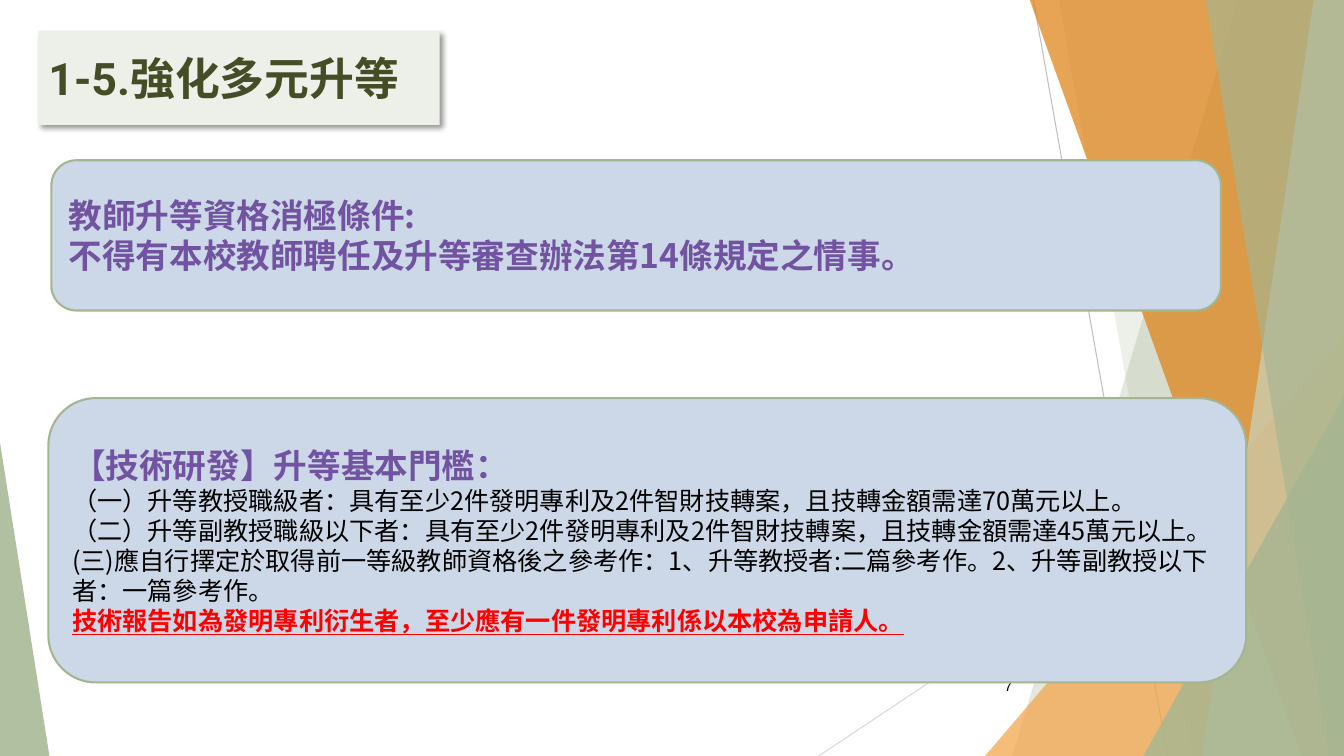
"""Build the slide on teacher promotion rules."""
from lxml import etree
from pptx import Presentation
from pptx.dml.color import RGBColor
from pptx.enum.shapes import MSO_CONNECTOR, MSO_SHAPE
from pptx.enum.text import MSO_ANCHOR, PP_ALIGN
from pptx.oxml import parse_xml
from pptx.oxml.ns import qn
from pptx.util import Inches, Pt

LINE = MSO_CONNECTOR.STRAIGHT
TRI = MSO_SHAPE.ISOSCELES_TRIANGLE
ROUND = MSO_SHAPE.ROUNDED_RECTANGLE
MIDDLE = MSO_ANCHOR.MIDDLE
LEFT, RIGHT = PP_ALIGN.LEFT, PP_ALIGN.RIGHT
SANS = "Noto Sans CJK SC"
COLORS = {
    "sage": "A5B592", "pale": "C9D3BE", "amber": "F3A447", "rust": "DD7E0E",
    "gray": "BFBFBF", "light": "D9D9D9", "mist": "EDF0E9", "olive": "444D26",
    "blue": "CCD8E7", "plum": "7153A1", "black": "000000", "red": "FF0000",
}


def paint(shape, color, alpha=100):
    shape.fill.solid()
    shape.fill.fore_color.rgb = RGBColor.from_string(COLORS[color])
    shape.line.fill.background()
    shape.shadow.inherit = False
    if alpha < 100:
        tint = shape.fill._xPr.find(qn("a:solidFill"))[0]
        etree.SubElement(tint, qn("a:alpha")).set("val", str(alpha * 1000))


def write(shape, rows, align=LEFT):
    frame = shape.text_frame
    frame.word_wrap = True
    frame.vertical_anchor = MIDDLE
    for i, (text, size, face, color, bold, under) in enumerate(rows):
        para = frame.add_paragraph() if i else frame.paragraphs[0]
        para.text = text
        para.alignment = align
        font = para.font
        font.size, font.name = Pt(size), face
        font.bold, font.underline = bold, under
        font.color.rgb = RGBColor.from_string(COLORS[color])


deck = Presentation()
deck.slide_width, deck.slide_height = Inches(13.33), Inches(7.5)
slide = deck.slides.add_slide(deck.slide_layouts[5])
shapes = slide.shapes

for x1, y1, x2, y2, color in [
    (10.25, 0, 11.58, 7.5, "gray"),
    (13.33, 4.03, 8.12, 7.5, "light"),
]:
    line = shapes.add_connector(LINE, Inches(x1), Inches(y1), Inches(x2), Inches(y2))
    line.line.color.rgb = RGBColor.from_string(COLORS[color])
    line.line.width = Pt(0.75)
    etree.SubElement(line._element.spPr, qn("a:effectLst"))

# bands: top x, bottom x; triangles: left, top, width, height, apex
for place, color, alpha in [
    ((12.28, 10.04), "sage", 30),
    ((10.5, 11.83), "sage", 20),
    ((9.77, 3.33, 3.56, 4.17, 1), "amber", 72),
    ((10.21, 12.91), "rust", 70),
    ((13.03, 11.92), "pale", 70),
    ((11.96, 13.18), "sage", 65),
    ((11.34, 3.93, 1.99, 3.57, 1), "sage", 80),
    ((0, 4.39, 0.49, 3.11, 0), "sage", 85),
]:
    if len(place) == 2:
        top, base = place
        pen = shapes.build_freeform(Inches(top), Inches(-0.01))
        ends = [(13.33, -0.01), (13.33, 7.5), (base, 7.5)]
        pen.add_line_segments([(Inches(x), Inches(y)) for x, y in ends])
        facet = pen.convert_to_shape()
    else:
        facet = shapes.add_shape(TRI, *map(Inches, place[:4]))
        facet.adjustments[0] = place[4]
    paint(facet, color, alpha)

page = shapes.add_textbox(Inches(9.39), Inches(6.61), Inches(0.75), Inches(0.4))
write(page, [("7", 10, "Courier New", "black", False, False)], RIGHT)

title = shapes.title
title.left, title.top = Inches(0.38), Inches(0.31)
title.width, title.height = Inches(3.98), Inches(0.93)
paint(title, "mist")
write(title, [("1-5.強化多元升等", 32, "Roboto", "olive", True, False)])
glow = title._element.spPr.find(qn("a:effectLst"))
glow.append(parse_xml(
    '<a:outerShdw xmlns:a="http://schemas.openxmlformats.org/drawingml/2006/main" '
    f'blurRad="{Pt(4)}" dist="{Pt(3)}" dir="2700000" algn="tl" rotWithShape="0">'
    f'<a:srgbClr val="{COLORS["black"]}"><a:alpha val="40000"/></a:srgbClr></a:outerShdw>'
))

head = (24, SANS, "plum", True, False)
body = (18, SANS, "black", False, False)
note = (18, SANS, "red", True, True)
for place, rows in [
    ((0.51, 1.59, 11.6, 1.49), [
        ("教師升等資格消極條件:", *head),
        ("不得有本校教師聘任及升等審查辦法第14條規定之情事。", *head),
    ]),
    ((0.48, 3.95, 11.88, 2.82), [
        ("【技術研發】升等基本門檻：", *head),
        ("（一）升等教授職級者：具有至少2件發明專利及2件智財技轉案，且技轉金額需達70萬元以上。", *body),
        ("（二）升等副教授職級以下者：具有至少2件發明專利及2件智財技轉案，且技轉金額需達45萬元以上。", *body),
        ("(三)應自行擇定於取得前一等級教師資格後之參考作：1、升等教授者:二篇參考作。2、升等副教授以下者：一篇參考作。", *body),
        ("技術報告如為發明專利衍生者，至少應有一件發明專利係以本校為申請人。", *note),
    ]),
]:
    card = shapes.add_shape(ROUND, *map(Inches, place))
    paint(card, "blue")
    card.line.color.rgb = RGBColor.from_string(COLORS["sage"])
    card.line.width = Pt(1.5)
    write(card, rows)

deck.save("out.pptx")
